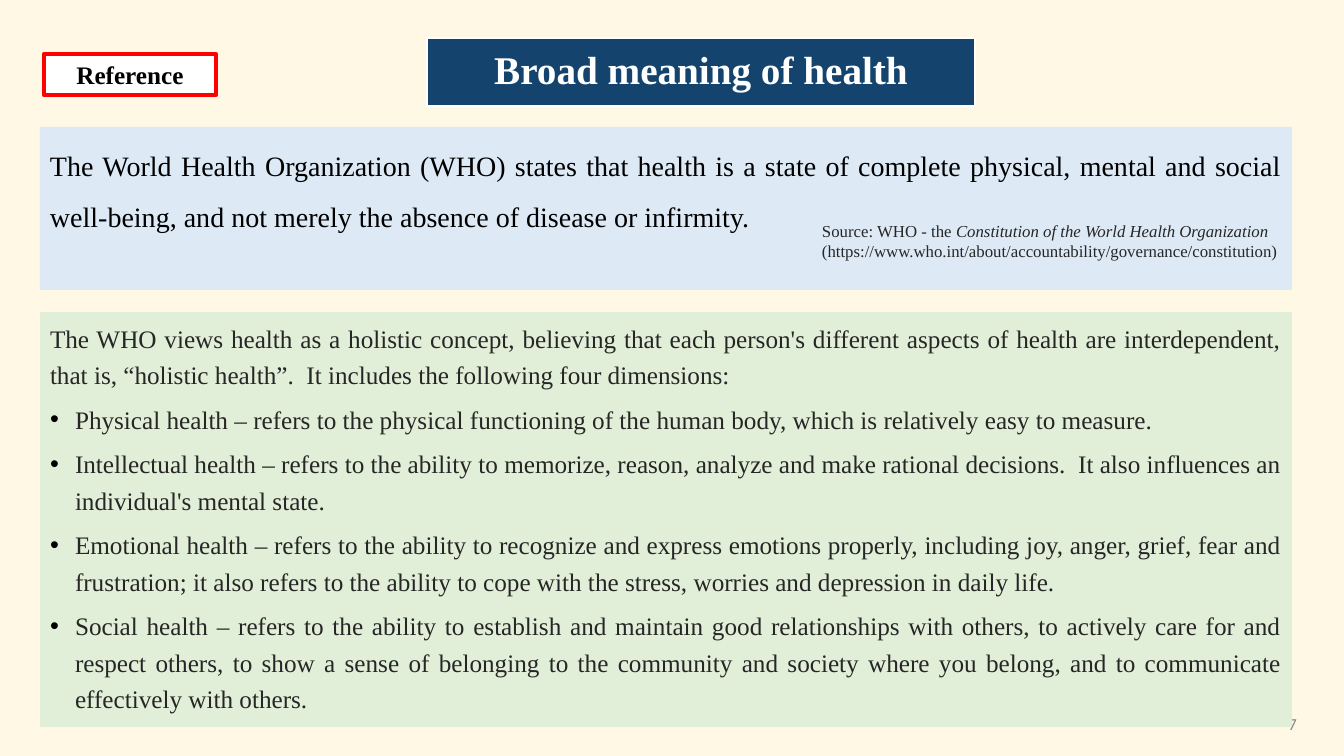
from pptx import Presentation
from pptx.dml.color import RGBColor
from pptx.enum.shapes import MSO_SHAPE
from pptx.enum.text import MSO_ANCHOR, MSO_AUTO_SIZE, PP_ALIGN
from pptx.oxml.xmlchemy import OxmlElement
from pptx.util import Pt

RECTANGLE = MSO_SHAPE.RECTANGLE
TOP, MIDDLE = MSO_ANCHOR.TOP, MSO_ANCHOR.MIDDLE
NO_AUTOFIT = MSO_AUTO_SIZE.NONE
LEFT, CENTER, RIGHT, JUSTIFY = PP_ALIGN.LEFT, PP_ALIGN.CENTER, PP_ALIGN.RIGHT, PP_ALIGN.JUSTIFY

SLIDE_WIDTH, SLIDE_HEIGHT = 1344, 756
EMU_PER_PX = 12192000 / SLIDE_WIDTH
COLORS = {
    "cream": "FFF8E5", "navy": "14446E", "white": "FFFFFF", "blue": "DDEAF6",
    "green": "E1EFD8", "red": "FF0000", "black": "000000", "ink": "262626",
    "gray": "888888",
}

DEFINITION = (
    "The World Health Organization (WHO) states that health is a state of complete "
    "physical, mental and social well-being, and not merely the absence of disease or infirmity."
)
SOURCE_LINES = [
    [("Source: WHO - the ", False), ("Constitution of the World Health Organization", True)],
    [("(https://www.who.int/about/accountability/governance/constitution)", False)],
]
HOLISTIC_INTRO = (
    "The WHO views health as a holistic concept, believing that each person's different "
    "aspects of health are interdependent, that is, “holistic health”.  It includes the "
    "following four dimensions:"
)
DIMENSIONS = [
    "Physical health – refers to the physical functioning of the human body, which is "
    "relatively easy to measure.",
    "Intellectual health – refers to the ability to memorize, reason, analyze and make "
    "rational decisions.  It also influences an individual's mental state.",
    "Emotional health – refers to the ability to recognize and express emotions properly, "
    "including joy, anger, grief, fear and frustration; it also refers to the ability to "
    "cope with the stress, worries and depression in daily life.",
    "Social health – refers to the ability to establish and maintain good relationships "
    "with others, to actively care for and respect others, to show a sense of belonging to "
    "the community and society where you belong, and to communicate effectively with others.",
]


def px(length):
    return round(length * EMU_PER_PX)


def rgb(name):
    return RGBColor.from_string(COLORS[name])


class HealthSlide:
    font_name = "Times New Roman"

    def __init__(self, presentation):
        self.slide = presentation.slides.add_slide(presentation.slide_layouts[1])
        backdrop = self.slide.background.fill
        backdrop.solid()
        backdrop.fore_color.rgb = rgb("cream")

    def place(self, shape, box):
        shape.left, shape.top, shape.width, shape.height = map(px, box)

    def paint(self, shape, fill, line=None, line_width=1):
        shape.fill.solid()
        shape.fill.fore_color.rgb = rgb(fill)
        if line:
            shape.line.color.rgb = rgb(line)
            shape.line.width = Pt(line_width)
        else:
            shape.line.fill.background()

    def frame(self, shape, anchor=TOP, insets=(10, 5)):
        text_frame = shape.text_frame
        text_frame.word_wrap = True
        text_frame.auto_size = NO_AUTOFIT
        text_frame.vertical_anchor = anchor
        text_frame.margin_left = text_frame.margin_right = px(insets[0])
        text_frame.margin_top = text_frame.margin_bottom = px(insets[1])
        return text_frame

    def format(self, paragraph, size, color, align=LEFT, spacing=1.0, before=0, bold=False, font=None):
        paragraph.alignment = align
        paragraph.line_spacing = spacing
        paragraph.space_before = Pt(before)
        for run in paragraph.runs:
            run.font.name = font or self.font_name
            run.font.size = Pt(size)
            run.font.bold = bold
            run.font.color.rgb = rgb(color)

    def bullet(self, paragraph, indent):
        properties = paragraph._p.get_or_add_pPr()
        properties.set("marL", str(px(indent)))
        properties.set("indent", str(-px(indent)))
        if not indent:
            properties.append(OxmlElement("a:buNone"))
            return
        bullet_color = OxmlElement("a:buClr")
        shade = OxmlElement("a:srgbClr")
        shade.set("val", COLORS["black"])
        bullet_color.append(shade)
        bullet_font = OxmlElement("a:buFont")
        bullet_font.set("typeface", "Arial")
        mark = OxmlElement("a:buChar")
        mark.set("char", "•")
        properties.extend([bullet_color, bullet_font, mark])

    def title(self, text, box):
        heading = self.slide.shapes.title
        self.place(heading, box)
        outline = OxmlElement("a:prstGeom")
        outline.set("prst", "roundRect")
        outline.append(OxmlElement("a:avLst"))
        heading._element.spPr.append(outline)
        self.paint(heading, "navy", "white")
        text_frame = self.frame(heading, MIDDLE, (27, 3))
        text_frame.text = text
        self.format(text_frame.paragraphs[0], 28, "white", CENTER, 0.9, bold=True)

    def body(self, intro, items, box):
        panel = self.slide.placeholders[1]
        self.place(panel, box)
        self.paint(panel, "green")
        text_frame = self.frame(panel)
        text_frame.text = "\n".join([intro, *items])
        for index, paragraph in enumerate(text_frame.paragraphs):
            self.bullet(paragraph, 25 if index else 0)
            self.format(paragraph, 18, "ink", JUSTIFY, 1.2, before=6 if index else 0)

    def panel(self, text, box, fill, line=None, line_width=1, **style):
        rectangle = self.slide.shapes.add_shape(RECTANGLE, *map(px, box))
        rectangle.shadow.inherit = False
        self.paint(rectangle, fill, line, line_width)
        text_frame = self.frame(rectangle)
        text_frame.text = text
        self.format(text_frame.paragraphs[0], color="black", **style)

    def note(self, lines, box, anchor=TOP, **style):
        text_box = self.slide.shapes.add_textbox(*map(px, box))
        text_frame = self.frame(text_box, anchor)
        for index, pieces in enumerate(lines):
            paragraph = text_frame.add_paragraph() if index else text_frame.paragraphs[0]
            for text, italic in pieces:
                run = paragraph.add_run()
                run.text = text
                run.font.italic = italic
            self.format(paragraph, 12, **style)
        return text_box

    def send_to_back(self, shape):
        self.slide.shapes._spTree.insert(2, shape._element)


def main():
    presentation = Presentation()
    presentation.slide_width = px(SLIDE_WIDTH)
    presentation.slide_height = px(SLIDE_HEIGHT)

    health = HealthSlide(presentation)
    page_number = health.note([[("7", False)]], (1005, 704, 302, 40), MIDDLE,
                              color="gray", align=RIGHT, font="Calibri")
    health.send_to_back(page_number)
    health.body(HOLISTIC_INTRO, DIMENSIONS, (40, 312, 1252, 415))
    health.title("Broad meaning of health", (427, 38, 548, 68))
    health.panel(DEFINITION, (40, 127, 1252, 163), "blue", size=20, align=JUSTIFY, spacing=1.5)
    health.note(SOURCE_LINES, (812, 216, 480, 50), color="ink")
    health.panel("Reference", (44, 54, 172, 41), "white", "red", 3, size=18, align=CENTER, bold=True)
    presentation.save("out.pptx")


if __name__ == "__main__":
    main()
